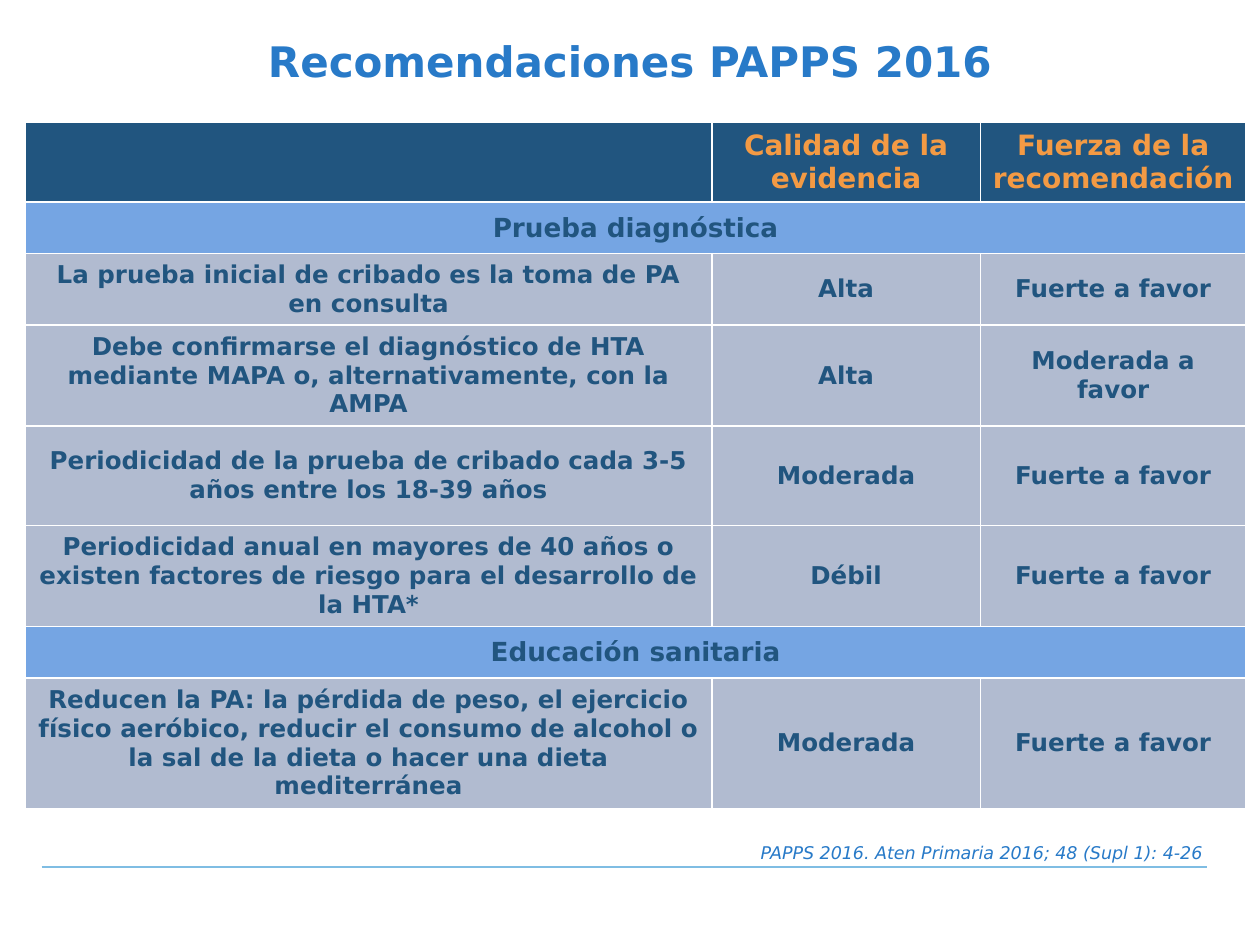
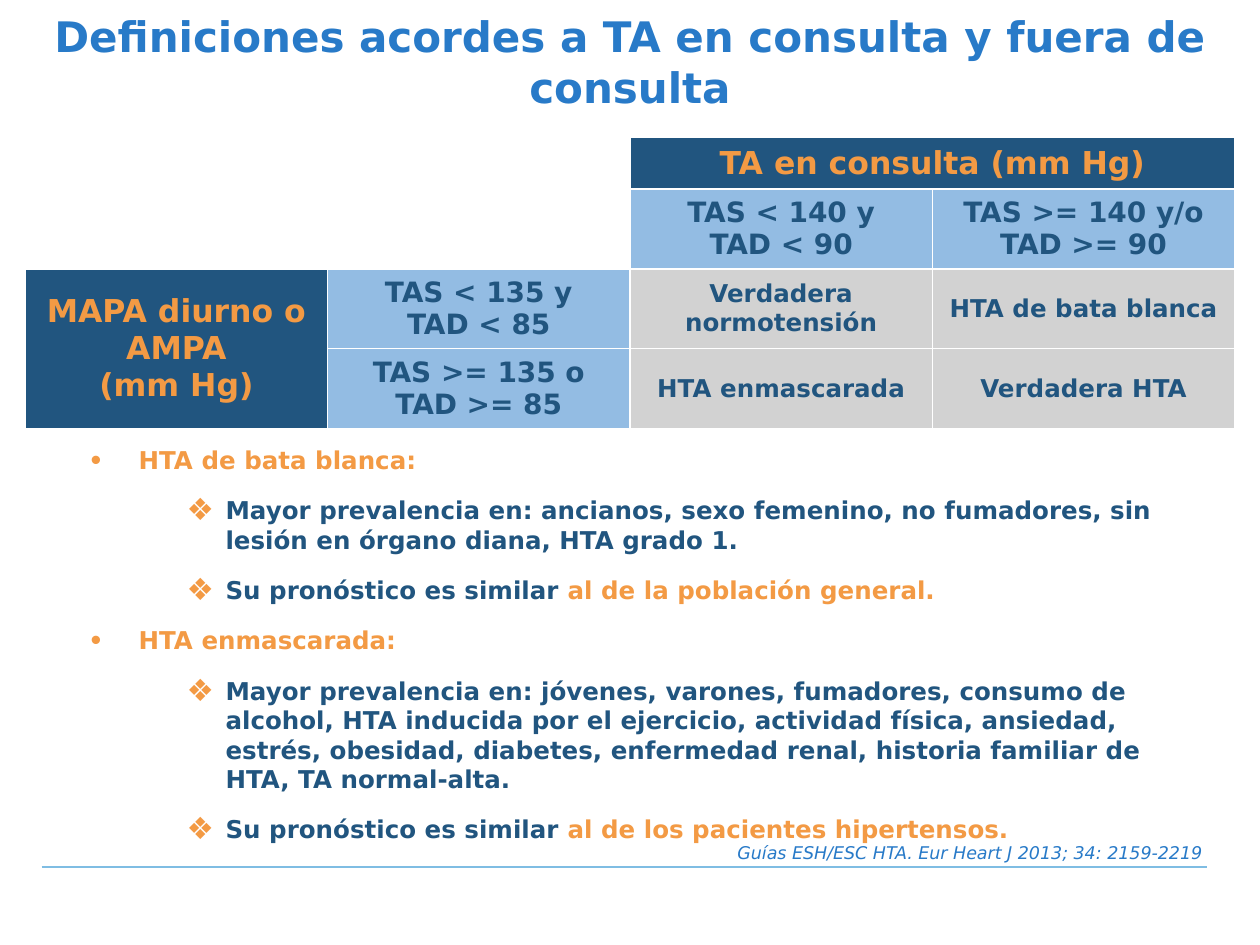
from lxml.etree import SubElement
from pptx import Presentation
from pptx.dml.color import RGBColor
from pptx.enum.shapes import MSO_CONNECTOR
from pptx.enum.text import MSO_ANCHOR, MSO_AUTO_SIZE, PP_ALIGN
from pptx.oxml.ns import qn
from pptx.util import Inches, Pt

# Shared style
FONT = "DejaVu Sans"
BLUE = RGBColor(0x28, 0x7A, 0xC8)
NAVY = RGBColor(0x21, 0x55, 0x7F)
ORANGE = RGBColor(0xF3, 0x9A, 0x44)
WHITE = RGBColor(0xFF, 0xFF, 0xFF)
RULE_BLUE = RGBColor(0x7F, 0xBD, 0xE3)
BAND_BLUE = RGBColor(0x75, 0xA5, 0xE3)
BODY_GREY = RGBColor(0xB1, 0xBB, 0xD0)
RANGE_BLUE = RGBColor(0x93, 0xBC, 0xE3)
RESULT_GREY = RGBColor(0xD2, 0xD2, 0xD2)

# Cell styles: fill, text colour, text size
HEADER = (NAVY, ORANGE, 16)
BAND = (BAND_BLUE, NAVY, 15)
BODY = (BODY_GREY, NAVY, 14)
AXIS = (NAVY, ORANGE, 18)
RANGE = (RANGE_BLUE, NAVY, 16)
RESULT = (RESULT_GREY, NAVY, 14)
BLANK = (None, NAVY, 14)

TITLE_ONLY, TITLE_AND_CONTENT = 5, 1


def style_font(font, size, color, bold=True, italic=False):
    font.name, font.size = FONT, Pt(size)
    font.bold, font.italic = bold, italic
    font.color.rgb = color


def place(shape, left, top, width, height):
    shape.left, shape.top = Inches(left), Inches(top)
    shape.width, shape.height = Inches(width), Inches(height)


def add_content_slide(prs, layout, title, source):
    """Slide with the common title, footer rule and source line."""
    slide = prs.slides.add_slide(prs.slide_layouts[layout])

    rule = slide.shapes.add_connector(
        MSO_CONNECTOR.STRAIGHT, Inches(0.33), Inches(6.88), Inches(9.58), Inches(6.88))
    rule.line.color.rgb = RULE_BLUE
    rule.line.width = Pt(0.75)
    SubElement(rule.line._get_or_add_ln().getparent(), qn("a:effectLst"))

    heading = slide.shapes.title
    place(heading, 0, 0.16, 10, 0.65)
    frame = heading.text_frame
    frame.text = title
    frame.auto_size = MSO_AUTO_SIZE.NONE
    frame.vertical_anchor = MSO_ANCHOR.MIDDLE
    frame.paragraphs[0].alignment = PP_ALIGN.CENTER
    style_font(frame.paragraphs[0].runs[0].font, 24, BLUE)

    citation = slide.shapes.add_textbox(
        Inches(0.62), Inches(6.63), Inches(9.02), Inches(0.27)).text_frame
    citation.word_wrap = True
    citation.text = source
    citation.paragraphs[0].alignment = PP_ALIGN.RIGHT
    style_font(citation.paragraphs[0].runs[0].font, 10, BLUE, bold=False, italic=True)
    return slide


def add_borders(cell):
    properties = cell._tc.get_or_add_tcPr()
    for side in ("lnL", "lnR", "lnT", "lnB"):
        border = SubElement(properties, qn(f"a:{side}"), w=str(Pt(1)))
        fill = SubElement(border, qn("a:solidFill"))
        SubElement(fill, qn("a:srgbClr"), val=str(WHITE))


def fill_cell(cell, text, style):
    fill, color, size = style
    if fill is None:
        cell.fill.background()
    else:
        cell.fill.solid()
        cell.fill.fore_color.rgb = fill
    cell.vertical_anchor = MSO_ANCHOR.MIDDLE
    cell.text_frame.text = text
    for paragraph in cell.text_frame.paragraphs:
        paragraph.alignment = PP_ALIGN.CENTER
        style_font(paragraph.font, size, color)
        for run in paragraph.runs:
            style_font(run.font, size, color)


def add_grid(slide, left, top, widths, heights, rows, merges):
    """Table from rows of (text, style); None marks a merged-away cell."""
    table = slide.shapes.add_table(
        len(heights), len(widths), Inches(left), Inches(top),
        Inches(sum(widths)), Inches(sum(heights))).table
    table.horz_banding = False
    for column, width in zip(table.columns, widths):
        column.width = Inches(width)
    for row, height in zip(table.rows, heights):
        row.height = Inches(height)
    for first, last in merges:
        table.cell(*first).merge(table.cell(*last))
    for r, row in enumerate(rows):
        for c, content in enumerate(row):
            add_borders(table.cell(r, c))
            if content:
                fill_cell(table.cell(r, c), *content)


def add_bullet(paragraph, level):
    """Hanging bullet: round on level 0, diamond on level 1."""
    paragraph.level = level
    margin, hang, mark = [(1, 0.38, "•"), (1.69, 0.31, "❖")][level]
    properties = paragraph._p.get_or_add_pPr()
    properties.set("marL", str(Inches(margin)))
    properties.set("indent", str(-Inches(hang)))
    color = SubElement(properties, qn("a:buClr"))
    SubElement(color, qn("a:srgbClr"), val=str(ORANGE))
    SubElement(properties, qn("a:buSzPct"), val="125000")
    SubElement(properties, qn("a:buChar"), char=mark)


def add_bullet_list(slide, items):
    """Items are (level, [(text, colour), ...])."""
    body = slide.placeholders[1]
    place(body, 0, 3.48, 9.59, 4.84)
    frame = body.text_frame
    frame.auto_size = MSO_AUTO_SIZE.NONE
    frame.vertical_anchor = MSO_ANCHOR.TOP
    for index, (level, parts) in enumerate(items):
        paragraph = frame.add_paragraph() if index else frame.paragraphs[0]
        add_bullet(paragraph, level)
        paragraph.alignment = PP_ALIGN.LEFT
        paragraph.space_before = Pt(12 if index else 0)
        for text, color in parts:
            run = paragraph.add_run()
            run.text = text
            style_font(run.font, 14, color)


def build_recommendations(prs):
    slide = add_content_slide(
        prs, TITLE_ONLY, "Recomendaciones PAPPS 2016",
        "PAPPS 2016. Aten Primaria 2016; 48 (Supl 1): 4-26")

    def band(text):
        return [(text, BAND), None, None]

    def advice(*texts):
        return [(text, BODY) for text in texts]

    rows = [
        [("", HEADER), ("Calidad de la evidencia", HEADER),
         ("Fuerza de la recomendación", HEADER)],
        band("Prueba diagnóstica"),
        advice("La prueba inicial de cribado es la toma de PA en consulta",
               "Alta", "Fuerte a favor"),
        advice("Debe confirmarse el diagnóstico de HTA mediante MAPA o, "
               "alternativamente, con la AMPA", "Alta", "Moderada a favor"),
        advice("Periodicidad de la prueba de cribado cada 3-5 años entre los 18-39 años",
               "Moderada", "Fuerte a favor"),
        advice("Periodicidad anual en mayores de 40 años o existen factores de riesgo "
               "para el desarrollo de la HTA*", "Débil", "Fuerte a favor"),
        band("Educación sanitaria"),
        advice("Reducen la PA: la pérdida de peso, el ejercicio físico aeróbico, reducir "
               "el consumo de alcohol o la sal de la dieta o hacer una dieta mediterránea",
               "Moderada", "Fuerte a favor"),
    ]
    add_grid(slide, 0.2, 0.97, [5.45, 2.13, 2.11],
             [0.62, 0.41, 0.55, 0.79, 0.79, 0.79, 0.41, 1.02], rows,
             merges=[((1, 0), (1, 2)), ((6, 0), (6, 2))])


def build_definitions(prs):
    slide = add_content_slide(
        prs, TITLE_AND_CONTENT,
        "Definiciones acordes a TA en consulta y fuera de consulta",
        "Guías ESH/ESC HTA. Eur Heart J 2013; 34: 2159-2219")

    rows = [
        [("", BLANK), None, ("TA en consulta (mm Hg)", AXIS), None],
        [None, None, ("TAS < 140 y\nTAD < 90", RANGE),
         ("TAS >= 140 y/o\nTAD >= 90", RANGE)],
        [("MAPA diurno o\nAMPA\n(mm Hg)", AXIS), ("TAS < 135 y\nTAD < 85", RANGE),
         ("Verdadera normotensión", RESULT), ("HTA de bata blanca", RESULT)],
        [None, ("TAS >= 135 o\nTAD >= 85", RANGE),
         ("HTA enmascarada", RESULT), ("Verdadera HTA", RESULT)],
    ]
    add_grid(slide, 0.2, 1.09, [2.4] * 4, [0.41, 0.61, 0.62, 0.61], rows,
             merges=[((0, 0), (1, 1)), ((0, 2), (0, 3)), ((2, 0), (3, 0))])

    prognosis = ("Su pronóstico es similar ", NAVY)
    add_bullet_list(slide, [
        (0, [("HTA de bata blanca:", ORANGE)]),
        (1, [("Mayor prevalencia en: ancianos, sexo femenino, no fumadores, sin lesión "
              "en órgano diana, HTA grado 1.", NAVY)]),
        (1, [prognosis, ("al de la población general.", ORANGE)]),
        (0, [("HTA enmascarada:", ORANGE)]),
        (1, [("Mayor prevalencia en: jóvenes, varones, fumadores, consumo de alcohol, HTA "
              "inducida por el ejercicio, actividad física, ansiedad, estrés, obesidad, "
              "diabetes, enfermedad renal, historia familiar de HTA, TA normal-alta.", NAVY)]),
        (1, [prognosis, ("al de los pacientes hipertensos.", ORANGE)]),
    ])


def main():
    prs = Presentation()
    prs.slide_width, prs.slide_height = Inches(10), Inches(7.5)
    build_recommendations(prs)
    build_definitions(prs)
    prs.save("out.pptx")


if __name__ == "__main__":
    main()
